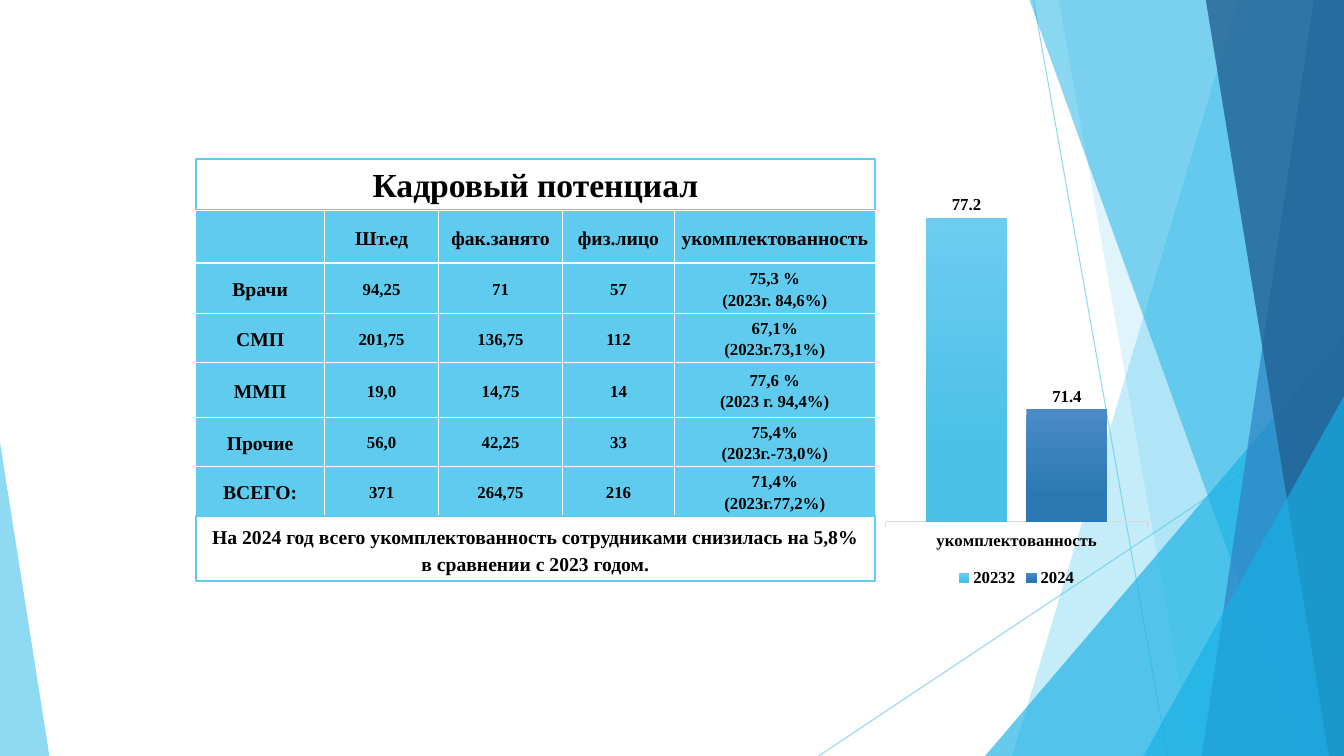
"""Build the staffing slide: a table of posts, its summary and a two-year column chart."""
from typing import NamedTuple

import pptx
import pptx.chart.data
import pptx.dml.color
import pptx.enum.chart
import pptx.enum.shapes
import pptx.enum.text
import pptx.oxml
import pptx.oxml.ns
import pptx.util

Inches = pptx.util.Inches
Pt = pptx.util.Pt
CENTER = pptx.enum.text.PP_ALIGN.CENTER
MIDDLE = pptx.enum.text.MSO_ANCHOR.MIDDLE
WIDTH, HEIGHT = 13.33, 7.5
LEFT, PANEL_WIDTH = 1.94, 6.74
SKY, CYAN, BLUE, NAVY = "5FCBEF", "17B0E4", "2E83C3", "226292"
BLACK, WHITE, GREY = "000000", "FFFFFF", "D9D9D9"


class Ray(NamedTuple):
    x1: float
    y1: float
    x2: float
    y2: float


class Band(NamedTuple):
    top_x: float
    bottom_x: float
    color: str
    opacity: int


class Wedge(NamedTuple):
    left: float
    top: float
    width: float
    apex: float
    color: str
    opacity: int


class Year(NamedTuple):
    name: str
    staffing: float
    top_color: str
    bottom_color: str


DECORATIONS = [
    Ray(10.25, 0, 11.58, HEIGHT),
    Ray(WIDTH, 4.03, 8.12, HEIGHT),
    Band(12.28, 10.04, SKY, 36),
    Band(10.5, 11.83, SKY, 20),
    Wedge(9.77, 3.33, 3.56, 1, CYAN, 66),
    Band(10.21, 12.91, CYAN, 50),
    Band(13.03, 11.92, BLUE, 70),
    Band(11.96, 13.18, NAVY, 80),
    Wedge(11.34, 3.93, 1.99, 1, CYAN, 66),
    Wedge(0, 4.39, 0.49, 0, SKY, 70),
]
COLUMN_WIDTHS = [1.28, 1.13, 1.23, 1.11, 1.99]
ROW_HEIGHTS = [0.52, 0.5, 0.49, 0.54, 0.49, 0.49]
STAFF = [
    ["", "Шт.ед", "фак.занято", "физ.лицо", "укомплектованность"],
    ["Врачи", "94,25", "71", "57", "75,3 %\n(2023г. 84,6%)"],
    ["СМП", "201,75", "136,75", "112", "67,1%\n(2023г.73,1%)"],
    ["ММП", "19,0", "14,75", "14", "77,6 %\n(2023 г. 94,4%)"],
    ["Прочие", "56,0", "42,25", "33", "75,4%\n(2023г.-73,0%)"],
    ["ВСЕГО:", "371", "264,75", "216", "71,4%\n(2023г.77,2%)"],
]
SUMMARY = ("На 2024 год всего укомплектованность сотрудниками снизилась на 5,8%\n"
           "в сравнении с 2023 годом.")
YEARS = [Year("20232", 77.2, "6CCDF0", "4BC0E6"), Year("2024", 71.4, "4A8BC6", "2A78B2")]


def rgb(color: str) -> pptx.dml.color.RGBColor:
    return pptx.dml.color.RGBColor.from_string(color)


def set_font(font, size: float) -> None:
    font.name, font.size, font.bold = "Times New Roman", Pt(size), True
    font.color.rgb = rgb(BLACK)


def write(frame, text: str, size: float, spacing: float) -> None:
    frame.text = text
    for paragraph in frame.paragraphs:
        paragraph.alignment, paragraph.line_spacing = CENTER, spacing
        set_font(paragraph.font, size)


def set_opacity(shape, percent: int) -> None:
    for color in shape.element.spPr.iter(pptx.oxml.ns.qn("a:srgbClr")):
        color.makeelement
        alpha = pptx.oxml.parse_xml(
            f'<a:alpha {pptx.oxml.ns.nsdecls("a")} val="{percent * 1000}"/>')
        color.append(alpha)


def draw_ray(shapes, ray: Ray) -> None:
    line = shapes.add_connector(
        pptx.enum.shapes.MSO_CONNECTOR.STRAIGHT, *(Inches(value) for value in ray))
    line.line.color.rgb, line.line.width = rgb(SKY), Pt(0.75)
    set_opacity(line, 70)
    line.element.spPr.append(
        pptx.oxml.parse_xml(f'<a:effectLst {pptx.oxml.ns.nsdecls("a")}/>'))


def fill_decoration(shape, color: str, opacity: int) -> None:
    shape.shadow.inherit = False
    shape.fill.solid()
    shape.fill.fore_color.rgb = rgb(color)
    shape.line.fill.background()
    set_opacity(shape, opacity)


def draw_band(shapes, band: Band) -> None:
    outline = shapes.build_freeform(Inches(band.top_x), 0)
    corners = [(WIDTH, 0), (WIDTH, HEIGHT), (band.bottom_x, HEIGHT)]
    outline.add_line_segments([(Inches(x), Inches(y)) for x, y in corners])
    fill_decoration(outline.convert_to_shape(), band.color, band.opacity)


def draw_wedge(shapes, wedge: Wedge) -> None:
    triangle = shapes.add_shape(
        pptx.enum.shapes.MSO_SHAPE.ISOSCELES_TRIANGLE, Inches(wedge.left),
        Inches(wedge.top), Inches(wedge.width), Inches(HEIGHT - wedge.top))
    triangle.adjustments[0] = wedge.apex
    fill_decoration(triangle, wedge.color, wedge.opacity)


def format_panel(panel, top: float, height: float, text: str, size: float,
                 spacing: float) -> None:
    panel.left, panel.top = Inches(LEFT), Inches(top)
    panel.width, panel.height = Inches(PANEL_WIDTH), Inches(height)
    panel.fill.solid()
    panel.fill.fore_color.rgb = rgb(WHITE)
    panel.line.color.rgb, panel.line.width = rgb(SKY), Pt(1.5)
    frame = panel.text_frame
    frame.word_wrap, frame.vertical_anchor = True, MIDDLE
    frame.auto_size = pptx.enum.text.MSO_AUTO_SIZE.NONE
    write(frame, text, size, spacing)


def format_cell(cell, text: str, size: float) -> None:
    cell.margin_left = cell.margin_right = Inches(0.06)
    cell.margin_top = cell.margin_bottom = 0
    cell.vertical_anchor = MIDDLE
    write(cell.text_frame, text, size, 1.15)
    properties = cell._tc.get_or_add_tcPr()
    for side in ("lnL", "lnR", "lnT", "lnB"):
        properties.append(pptx.oxml.parse_xml(
            f'<a:{side} {pptx.oxml.ns.nsdecls("a")} w="12700"><a:solidFill>'
            f'<a:srgbClr val="{WHITE}"/></a:solidFill></a:{side}>'))
    cell.fill.solid()
    cell.fill.fore_color.rgb = rgb(SKY)


def draw_staff(shapes) -> None:
    table = shapes.add_table(
        len(ROW_HEIGHTS), len(COLUMN_WIDTHS), Inches(LEFT), Inches(2.09),
        Inches(PANEL_WIDTH), Inches(sum(ROW_HEIGHTS))).table
    table.first_row = table.horz_banding = False
    for column, width in zip(table.columns, COLUMN_WIDTHS):
        column.width = Inches(width)
    for r, (height, texts) in enumerate(zip(ROW_HEIGHTS, STAFF)):
        table.rows[r].height = Inches(height)
        for c, text in enumerate(texts):
            format_cell(table.cell(r, c), text, 12 if r and c else 14)


def draw_staffing(shapes) -> None:
    data = pptx.chart.data.CategoryChartData()
    data.categories = ["укомплектованность"]
    for year in YEARS:
        data.add_series(year.name, [year.staffing])
    kinds = pptx.enum.chart
    chart = shapes.add_chart(kinds.XL_CHART_TYPE.COLUMN_CLUSTERED, Inches(8.73),
                             Inches(1.82), Inches(2.71), Inches(4.04), data).chart
    set_font(chart.font, 10)
    chart.has_title, chart.has_legend = False, True
    chart.legend.position = kinds.XL_LEGEND_POSITION.BOTTOM
    chart.legend.include_in_layout = False
    set_font(chart.legend.font, 12)
    scale, names = chart.value_axis, chart.category_axis
    scale.visible = scale.has_major_gridlines = False
    scale.minimum_scale, scale.maximum_scale = 68, 78
    names.major_tick_mark = kinds.XL_TICK_MARK.OUTSIDE
    names.format.line.color.rgb, names.format.line.width = rgb(GREY), Pt(1)
    set_font(names.tick_labels.font, 12)
    plot = chart.plots[0]
    plot.gap_width, plot.overlap, plot.vary_by_categories = 100, -24, False
    for series, year in zip(plot.series, YEARS):
        fill = series.format.fill
        fill.gradient()
        fill.gradient_angle = 270
        stops = zip(fill.gradient_stops, (0, 0.78), (year.top_color, year.bottom_color))
        for stop, position, color in stops:
            stop.position, stop.color.rgb = position, rgb(color)
        labels = series.data_labels
        labels.show_value, labels.position = True, kinds.XL_LABEL_POSITION.OUTSIDE_END
        set_font(labels.font, 12)


def main() -> None:
    deck = pptx.Presentation()
    deck.slide_width, deck.slide_height = Inches(WIDTH), Inches(HEIGHT)
    slide = deck.slides.add_slide(deck.slide_layouts[5])
    shapes = slide.shapes
    painters = {Ray: draw_ray, Band: draw_band, Wedge: draw_wedge}
    for decoration in DECORATIONS:
        painters[type(decoration)](shapes, decoration)
    format_panel(shapes.title, 1.58, 0.5, "Кадровый потенциал", 24, 1)
    draw_staff(shapes)
    summary = shapes.add_shape(pptx.enum.shapes.MSO_SHAPE.RECTANGLE, 0, 0, 0, 0)
    summary.shadow.inherit = False
    format_panel(summary, 5.12, 0.64, SUMMARY, 14, 1.15)
    draw_staffing(shapes)
    deck.save("out.pptx")


if __name__ == "__main__":
    main()
